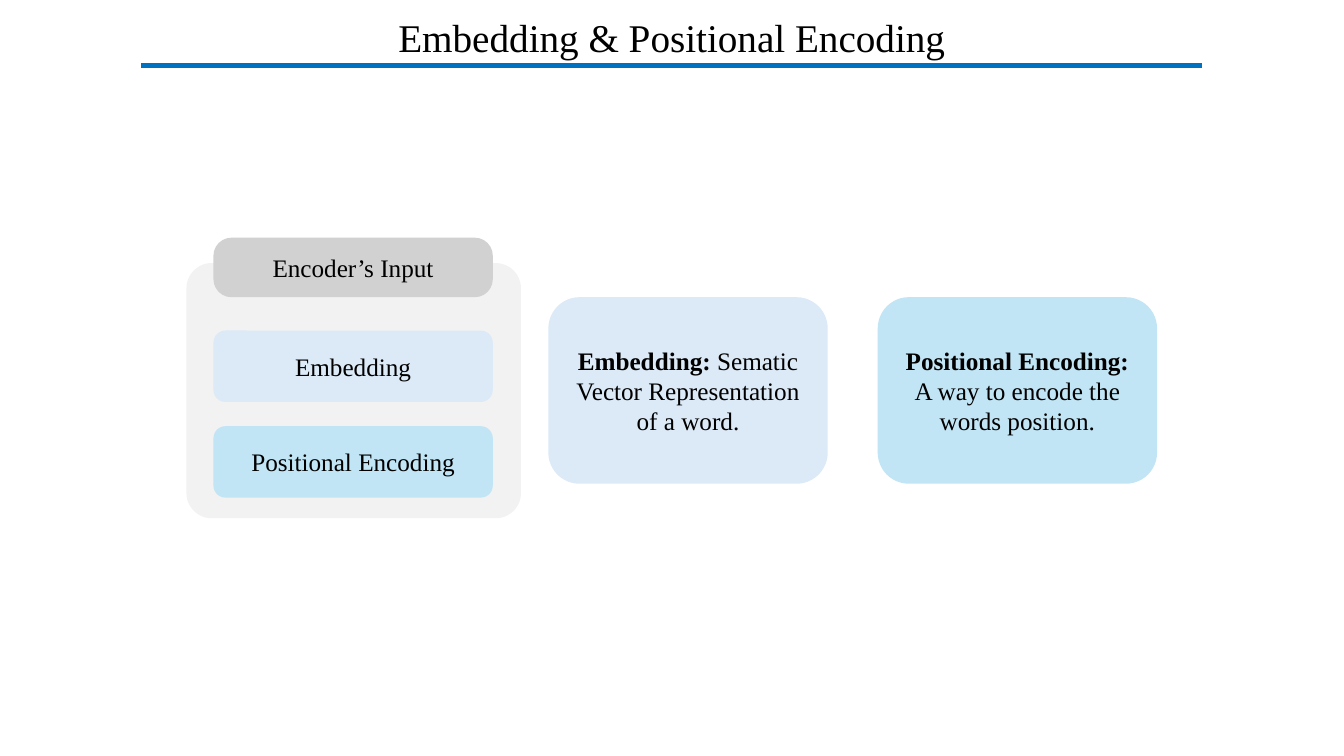
"""Build the slide on embedding and positional encoding."""
from lxml import etree
from pptx import Presentation
from pptx.dml.color import RGBColor
from pptx.enum.shapes import MSO_CONNECTOR, MSO_SHAPE
from pptx.enum.text import MSO_ANCHOR, MSO_AUTO_SIZE, PP_ALIGN
from pptx.oxml.ns import qn
from pptx.util import Cm, Pt

ROUNDED = MSO_SHAPE.ROUNDED_RECTANGLE
STRAIGHT = MSO_CONNECTOR.STRAIGHT
MIDDLE = MSO_ANCHOR.MIDDLE
CENTER = PP_ALIGN.CENTER
GROW = MSO_AUTO_SIZE.SHAPE_TO_FIT_TEXT
FONT = "Times New Roman"
COLORS = {
    "text": "000000",
    "rule": "0070C0",
    "panel": "F2F2F2",
    "header": "D1D1D1",
    "embedding": "DCEAF7",
    "position": "C1E5F5",
}


def color(name):
    return RGBColor.from_string(COLORS[name])


def write(box, text, heading="", size=18):
    frame = box.text_frame
    frame.word_wrap = True
    para = frame.paragraphs[0]
    para.alignment = CENTER
    for content, bold in ((heading, True), (text, False)):
        if content:
            span = para.add_run()
            span.text = content
            span.font.name = FONT
            span.font.size = Pt(size)
            span.font.bold = bold
            span.font.color.rgb = color("text")


deck = Presentation()
deck.slide_width, deck.slide_height = Cm(33.87), Cm(19.05)
page = deck.slides.add_slide(deck.slide_layouts[6])

title = page.shapes.add_textbox(Cm(7.06), Cm(0.2), Cm(19.74), Cm(1.45))
write(title, "Embedding & Positional Encoding", size=28)
title.text_frame.auto_size = GROW

rule = page.shapes.add_connector(STRAIGHT, Cm(3.56), Cm(1.65), Cm(30.3), Cm(1.65))
rule.line.color.rgb = color("rule")
rule.line.width = Pt(3)
etree.SubElement(rule._element.spPr, qn("a:effectLst"))

BOX_WIDTH = 7.04
STACK_LEFT = 5.38
CARD_TOP, CARD_HEIGHT = 7.49, 4.7
boxes = [
    (4.7, 6.63, 8.43, 6.43, 0.099, "panel", "", ""),
    (STACK_LEFT, 8.33, BOX_WIDTH, 1.8, 0.167, "embedding", "", "Embedding"),
    (STACK_LEFT, 10.74, BOX_WIDTH, 1.8, 0.167, "position", "", "Positional Encoding"),
    (STACK_LEFT, 5.99, BOX_WIDTH, 1.5, 0.302, "header", "", "Encoder’s Input"),
    (13.82, CARD_TOP, BOX_WIDTH, CARD_HEIGHT, 0.167, "embedding",
     "Embedding:", " Sematic Vector Representation of a word."),
    (22.12, CARD_TOP, BOX_WIDTH, CARD_HEIGHT, 0.167, "position",
     "Positional Encoding:", " A way to encode the words position."),
]
for left, top, width, height, corner, fill, heading, text in boxes:
    box = page.shapes.add_shape(ROUNDED, Cm(left), Cm(top), Cm(width), Cm(height))
    box.adjustments[0] = corner
    box.shadow.inherit = False
    box.fill.solid()
    box.fill.fore_color.rgb = color(fill)
    box.line.fill.background()
    box.text_frame.vertical_anchor = MIDDLE
    write(box, text, heading=heading)

deck.save("out.pptx")
